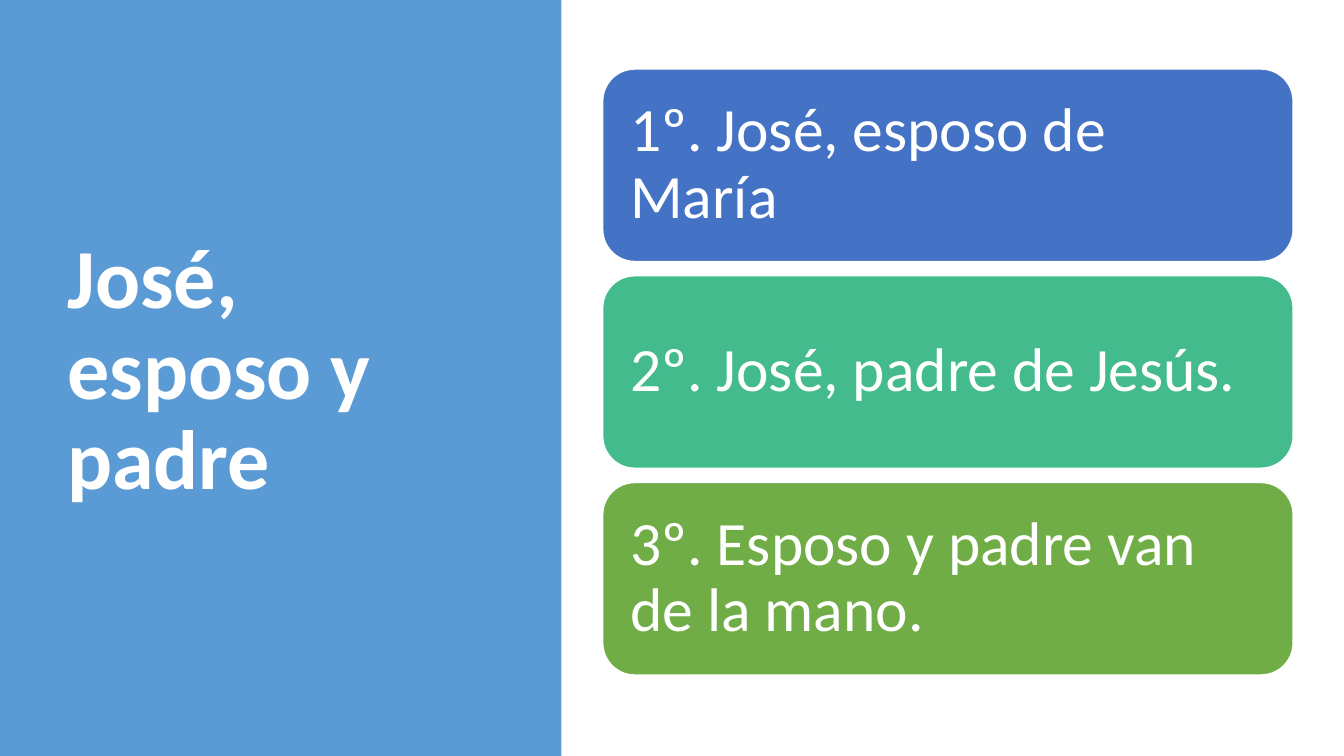
from dataclasses import dataclass

from pptx import Presentation
from pptx.dml.color import RGBColor
from pptx.enum.shapes import MSO_SHAPE as Preset
from pptx.enum.text import MSO_ANCHOR as Anchor, PP_ALIGN as Align
from pptx.shapes.autoshape import Shape
from pptx.slide import Slide
from pptx.util import Cm, Pt

COLORS = {
    "panel": "5B9BD5",
    "blue": "4472C4",
    "teal": "43BB8D",
    "green": "70AD47",
    "white": "FFFFFF",
}
PAGE_WIDTH, PAGE_HEIGHT = 33.87, 19.05
PANEL_WIDTH = 14.15
CARD_LEFT, CARD_TOP = 15.19, 1.74
CARD_WIDTH, CARD_HEIGHT, CARD_PITCH = 17.4, 4.85, 5.21


@dataclass(frozen=True)
class Card:
    text: str
    color: str


CARDS = [
    Card("1º. José, esposo de María", "blue"),
    Card("2º. José, padre de Jesús.", "teal"),
    Card("3º. Esposo y padre van de la mano.", "green"),
]


def rgb(name: str) -> RGBColor:
    return RGBColor.from_string(COLORS[name])


def write_text(box: Shape, text: str, size: int, bold: bool, inset: float) -> None:
    frame = box.text_frame
    frame.word_wrap = True
    frame.vertical_anchor = Anchor.MIDDLE
    frame.margin_left = frame.margin_right = Cm(inset)
    frame.margin_top = frame.margin_bottom = Cm(inset)
    para = frame.paragraphs[0]
    para.text = text
    para.alignment = Align.LEFT
    para.line_spacing = 0.9
    para.font.name = "Calibri"
    para.font.size = Pt(size)
    para.font.bold = bold
    para.font.color.rgb = rgb("white")


def add_panel(page: Slide) -> None:
    panel = page.shapes.add_shape(
        Preset.RECTANGLE, Cm(0), Cm(0), Cm(PANEL_WIDTH), Cm(PAGE_HEIGHT)
    )
    panel.shadow.inherit = False
    panel.fill.solid()
    panel.fill.fore_color.rgb = rgb("panel")
    panel.line.fill.background()


def add_title(page: Slide) -> None:
    title = page.shapes.add_textbox(Cm(1.45), Cm(1.73), Cm(10.57), Cm(15.29))
    write_text(title, "José, esposo y padre", 60, True, 0.25)


def add_card(page: Slide, card: Card, top: float) -> None:
    box = page.shapes.add_shape(
        Preset.ROUNDED_RECTANGLE,
        Cm(CARD_LEFT), Cm(top), Cm(CARD_WIDTH), Cm(CARD_HEIGHT),
    )
    box.shadow.inherit = False
    box.fill.solid()
    box.fill.fore_color.rgb = rgb(card.color)
    box.line.color.rgb = rgb("white")
    box.line.width = Pt(1)
    write_text(box, card.text, 44, False, 0.46)


def main() -> None:
    deck = Presentation()
    deck.slide_width, deck.slide_height = Cm(PAGE_WIDTH), Cm(PAGE_HEIGHT)
    page = deck.slides.add_slide(deck.slide_layouts[6])
    add_panel(page)
    add_title(page)
    for index, card in enumerate(CARDS):
        add_card(page, card, CARD_TOP + index * CARD_PITCH)
    deck.save("out.pptx")


if __name__ == "__main__":
    main()
